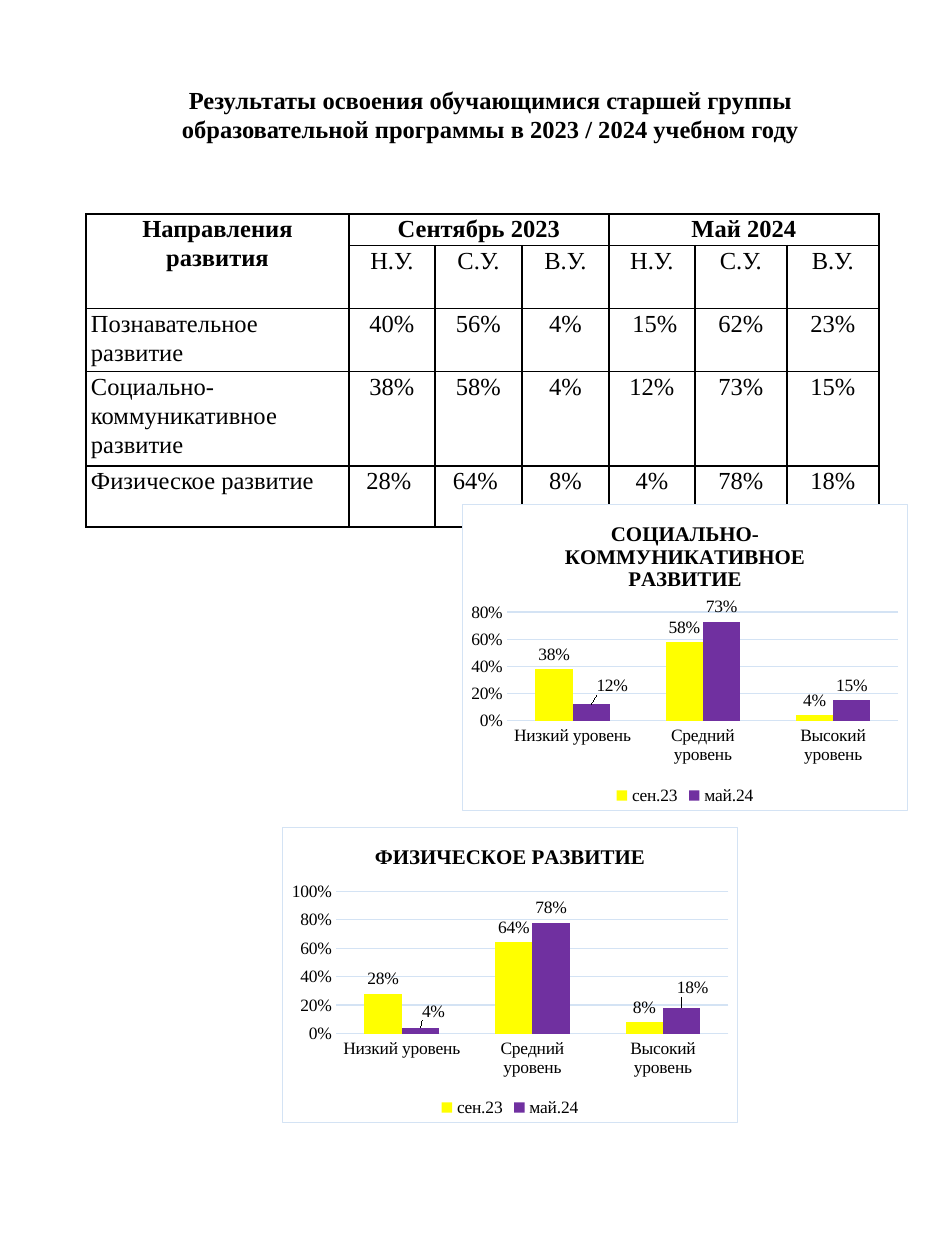
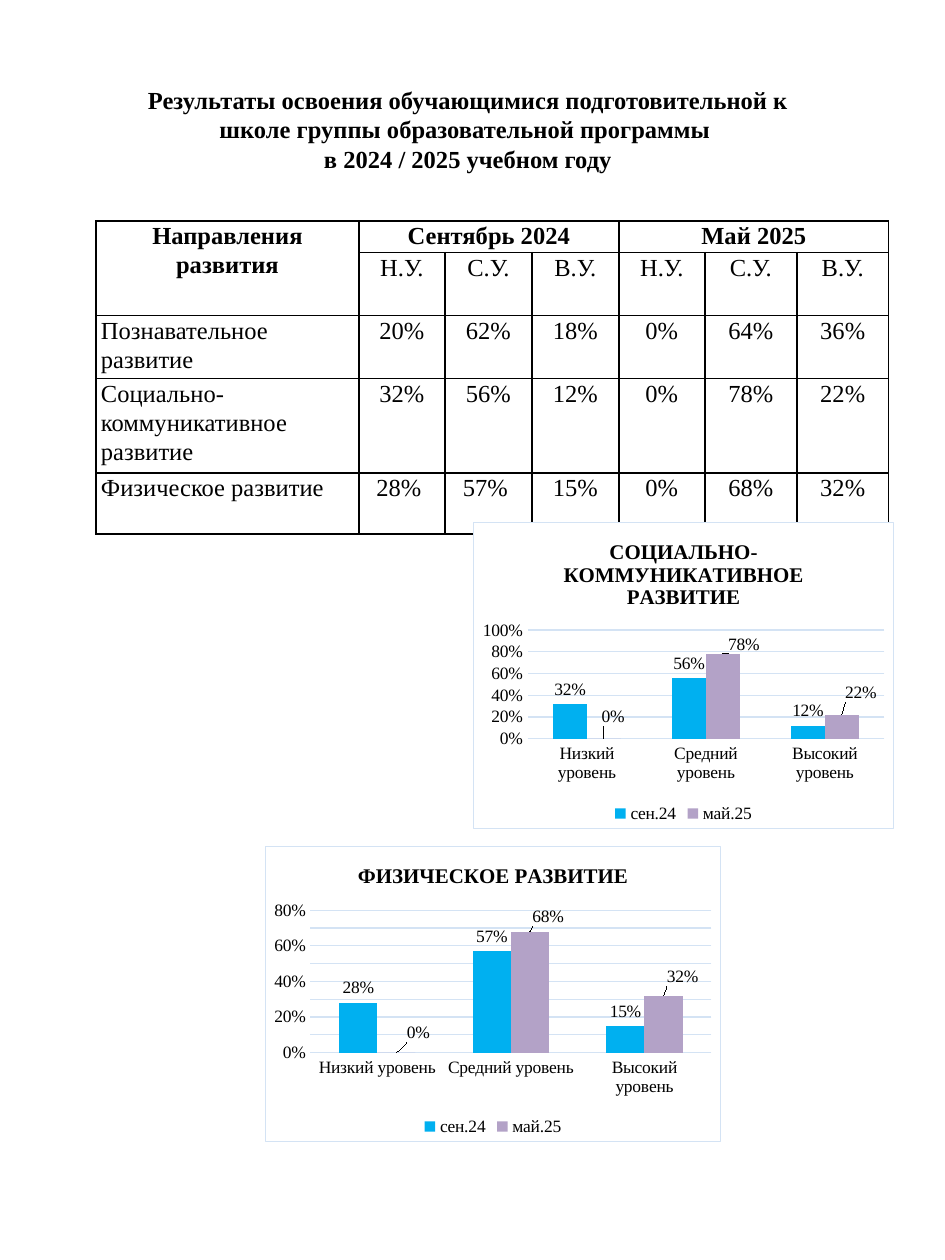
"""Build two slides comparing development levels at the start and end of a school year."""
from dataclasses import dataclass, field
from typing import Any

from pptx import Presentation
from pptx.chart.data import CategoryChartData
from pptx.dml.color import RGBColor
from pptx.enum.chart import XL_CHART_TYPE as ChartType
from pptx.enum.chart import XL_LABEL_POSITION as LabelPosition
from pptx.enum.chart import XL_LEGEND_POSITION as LegendPosition
from pptx.enum.chart import XL_TICK_MARK as TickMark
from pptx.enum.text import MSO_ANCHOR as Anchor
from pptx.enum.text import MSO_AUTO_SIZE as AutoSize
from pptx.enum.text import PP_ALIGN as Align
from pptx.oxml import parse_xml
from pptx.oxml.ns import nsdecls, qn
from pptx.util import Emu, Pt

PX = 914400 / 126
BLACK = RGBColor(0x00, 0x00, 0x00)
WHITE = RGBColor(0xFF, 0xFF, 0xFF)
PALE_BLUE = RGBColor(0xD4, 0xE3, 0xF4)
YELLOW = RGBColor(0xFF, 0xFF, 0x00)
PURPLE = RGBColor(0x70, 0x30, 0xA0)
SKY = RGBColor(0x00, 0xB0, 0xF0)
LILAC = RGBColor(0xB3, 0xA2, 0xC7)

FONT = "Times New Roman"
HEADING = {"name": FONT, "size": Pt(14), "bold": True}
REGULAR = HEADING | {"bold": False}
CHART_TEXT = {"name": FONT, "size": Pt(10)}
CHART_HEADING = {"name": FONT, "size": Pt(12), "bold": True}
PERCENT = {"number_format": "0%", "number_format_is_linked": False}
NO_TICKS = {"major_tick_mark": TickMark.NONE, "minor_tick_mark": TickMark.NONE}

LEVELS = ("Низкий уровень", "Средний уровень", "Высокий уровень")
LEVEL_CODES = ("Н.У.", "С.У.", "В.У.")
COGNITIVE = "Познавательное развитие"
SOCIAL = "Социально-коммуникативное развитие"
PHYSICAL = "Физическое развитие"
COLUMN_WIDTHS = (263, 86, 87, 87, 86, 92, 92)
ROW_HEIGHTS = (30, 58, 60, 87, 61)
PLOT_SPANS = {SOCIAL: (108, 109), PHYSICAL: (64, 143)}


@dataclass(frozen=True)
class Box:
    left: int
    top: int
    width: int
    height: int

    def emu(self) -> tuple[Emu, ...]:
        return tuple(px(side) for side in (self.left, self.top, self.width, self.height))


@dataclass(frozen=True)
class LevelChart:
    direction: str
    box: Box
    ceiling: float
    step: float
    nudges: dict[int, tuple[int, int]] = field(default_factory=dict)


@dataclass(frozen=True)
class YearReport:
    title: tuple[str, ...]
    title_box: Box
    table_left: int
    table_top: int
    months: tuple[str, str]
    short_months: tuple[str, str]
    colours: tuple[RGBColor, RGBColor]
    results: dict[str, tuple[str, ...]]
    charts: tuple[LevelChart, ...]


REPORTS = (
    YearReport(
        ("Результаты освоения обучающимися старшей группы "
         "образовательной программы в 2023 / 2024 учебном году",),
        Box(118, 78, 745, 72), 86, 214,
        ("Сентябрь 2023", "Май 2024"), ("сен.23", "май.24"), (YELLOW, PURPLE),
        {
            COGNITIVE: ("40%", "56%", "4%", " 15%", "62%", "23%"),
            SOCIAL: ("38%", "58%", "4%", "12%", "73%", "15%"),
            PHYSICAL: ("28% ", "64% ", "8%", "4%", "78%", "18%"),
        },
        (
            LevelChart(SOCIAL, Box(462, 504, 446, 307), 0.8, 0.2, {0: (21, -4)}),
            LevelChart(PHYSICAL, Box(282, 827, 456, 296), 1, 0.2, {0: (13, -2), 2: (11, -6)}),
        ),
    ),
    YearReport(
        ("Результаты освоения обучающимися подготовительной к "
         "школе группы образовательной программы ",
         "в 2024 / 2025 учебном году"),
        Box(129, 78, 678, 102), 96, 221,
        ("Сентябрь 2024", "Май 2025"), ("сен.24", "май.25"), (SKY, LILAC),
        {
            COGNITIVE: ("20%", "62%", "18%", "0%", "64%", "36%"),
            SOCIAL: ("32%", "56%", "12%", "0%", "78%", "22%"),
            PHYSICAL: ("28% ", "57% ", "15%", "0%", "68%", "32%"),
        },
        (
            LevelChart(SOCIAL, Box(473, 522, 421, 307), 1, 0.2,
                       {0: (9, -7), 1: (21, 5), 2: (19, -7)}),
            LevelChart(PHYSICAL, Box(265, 846, 456, 296), 0.8, 0.1,
                       {0: (22, -5), 1: (18, 0), 2: (19, -4)}),
        ),
    ),
)


def px(length: int) -> Emu:
    return Emu(round(length * PX))


def set_all(target: Any, values: dict[str, Any]) -> None:
    for name, value in values.items():
        setattr(target, name, value)


def set_font(font: Any, values: dict[str, Any]) -> None:
    set_all(font, values)
    font.color.rgb = BLACK


def add_title(slide: Any, report: YearReport) -> None:
    title = slide.shapes.title
    set_all(title, dict(zip(("left", "top", "width", "height"), report.title_box.emu())))
    frame = title.text_frame
    frame.text = "\n".join(report.title)
    set_all(frame, {"word_wrap": True, "vertical_anchor": Anchor.MIDDLE,
                    "auto_size": AutoSize.SHAPE_TO_FIT_TEXT})
    for paragraph in frame.paragraphs:
        paragraph.alignment = Align.CENTER
        set_font(paragraph.runs[0].font, HEADING)


def style_cell(cell: Any, text: str, font: dict[str, Any], align: Align) -> None:
    set_all(cell, {"text": text, "margin_left": px(5), "margin_right": px(5),
                   "margin_top": 0, "margin_bottom": 0, "vertical_anchor": Anchor.TOP})
    paragraph = cell.text_frame.paragraphs[0]
    set_all(paragraph, {"alignment": align, "line_spacing": 1.07})
    for run in paragraph.runs:
        set_font(run.font, font)
    properties = cell._tc.get_or_add_tcPr()
    for side in "LRTB":
        properties.append(parse_xml(
            f'<a:ln{side} {nsdecls("a")} w="12700"><a:solidFill>'
            f'<a:srgbClr val="{BLACK}"/></a:solidFill></a:ln{side}>'))
    cell.fill.background()


def add_results_table(slide: Any, report: YearReport) -> None:
    box = Box(report.table_left, report.table_top, sum(COLUMN_WIDTHS), sum(ROW_HEIGHTS))
    table = slide.shapes.add_table(len(ROW_HEIGHTS), len(COLUMN_WIDTHS), *box.emu()).table
    set_all(table, {"first_row": False, "horz_banding": False})
    for column, width in zip(table.columns, COLUMN_WIDTHS):
        column.width = px(width)
    for row, height in zip(table.rows, ROW_HEIGHTS):
        row.height = px(height)
    september, may = report.months
    lines = [("Направления развития", september, "", "", may, "", ""), ("", *LEVEL_CODES * 2)]
    lines += [(direction, *shares) for direction, shares in report.results.items()]
    for r, line in enumerate(lines):
        for c, text in enumerate(line):
            style_cell(table.cell(r, c), text, REGULAR if r else HEADING,
                       Align.LEFT if r > 1 and c == 0 else Align.CENTER)
    for start, end in (((0, 0), (1, 0)), ((0, 1), (0, 3)), ((0, 4), (0, 6))):
        table.cell(*start).merge(table.cell(*end))


def manual_layout(places: dict[str, float], inner: bool = False) -> Any:
    modes = '<c:layoutTarget val="inner"/><c:xMode val="edge"/><c:yMode val="edge"/>'
    numbers = "".join(f'<c:{name} val="{value:.4f}"/>' for name, value in places.items())
    return parse_xml(f'<c:layout {nsdecls("c")}><c:manualLayout>{modes if inner else ""}'
                     f'{numbers}</c:manualLayout></c:layout>')


def place_plot(chart: Any, level: LevelChart) -> None:
    box = level.box
    left = 45 if level.ceiling < 1 else 54
    top, height = PLOT_SPANS[level.direction]
    area = chart._chartSpace.chart.plotArea
    for automatic in area.findall(qn("c:layout")):
        area.remove(automatic)
    area.insert(0, manual_layout({
        "x": left / box.width, "y": top / box.height,
        "w": (box.width - left - 9) / box.width, "h": height / box.height}, inner=True))


def style_axes(chart: Any, level: LevelChart) -> None:
    levels, shares = chart.category_axis, chart.value_axis
    for axis in (levels, shares):
        set_all(axis, NO_TICKS)
    set_all(shares, {"minimum_scale": 0, "maximum_scale": level.ceiling,
                     "major_unit": level.step, "has_major_gridlines": True})
    set_all(shares.tick_labels, PERCENT)
    shares.format.line.fill.background()
    for line in (levels.format.line, shares.major_gridlines.format.line):
        line.color.rgb = PALE_BLUE
        line.width = Pt(0.75)


def style_series(chart: Any, level: LevelChart, colours: tuple[RGBColor, RGBColor]) -> None:
    plot = chart.plots[0]
    set_all(plot, {"gap_width": 150, "overlap": 0, "vary_by_categories": False})
    for series, colour in zip(plot.series, colours):
        series.format.fill.solid()
        series.format.fill.fore_color.rgb = colour
        series.invert_if_negative = False
        set_all(series.data_labels,
                PERCENT | {"show_value": True, "position": LabelPosition.OUTSIDE_END})
        set_font(series.data_labels.font, CHART_TEXT)
    may = plot.series[1]
    for index, (dx, dy) in level.nudges.items():
        label = may.points[index].data_label
        label.position = LabelPosition.OUTSIDE_END
        set_font(label.font, CHART_TEXT)
    for element in may._element.iter(qn("c:dLbl")):
        dx, dy = level.nudges[int(element.find(qn("c:idx")).get("val"))]
        element.insert(1, manual_layout({"x": dx / level.box.width, "y": dy / level.box.height}))


def add_level_chart(slide: Any, report: YearReport, level: LevelChart) -> None:
    shares = [int(share.strip(" %")) / 100 for share in report.results[level.direction]]
    data = CategoryChartData(number_format="0%")
    data.categories = LEVELS
    for month, values in zip(report.short_months, (shares[:3], shares[3:])):
        data.add_series(month, values)
    chart = slide.shapes.add_chart(ChartType.COLUMN_CLUSTERED, *level.box.emu(), data).chart
    set_font(chart.font, CHART_TEXT)
    set_all(chart, {"has_title": True, "has_legend": True})
    heading = chart.chart_title
    heading.include_in_layout = False
    heading.text_frame.text = level.direction.upper()
    set_font(heading.text_frame.paragraphs[0].runs[0].font, CHART_HEADING)
    set_all(chart.legend, {"position": LegendPosition.BOTTOM, "include_in_layout": False})
    chart._chartSpace.chart.addnext(parse_xml(
        f'<c:spPr {nsdecls("c", "a")}><a:solidFill><a:srgbClr val="{WHITE}"/></a:solidFill>'
        f'<a:ln w="9525"><a:solidFill><a:srgbClr val="{PALE_BLUE}"/></a:solidFill></a:ln></c:spPr>'))
    place_plot(chart, level)
    style_axes(chart, level)
    style_series(chart, level, report.colours)


def main() -> None:
    deck = Presentation()
    set_all(deck, {"slide_width": px(945), "slide_height": px(1260)})
    for report in REPORTS:
        slide = deck.slides.add_slide(deck.slide_layouts[5])
        add_title(slide, report)
        add_results_table(slide, report)
        for level in report.charts:
            add_level_chart(slide, report, level)
    deck.save("out.pptx")


if __name__ == "__main__":
    main()
